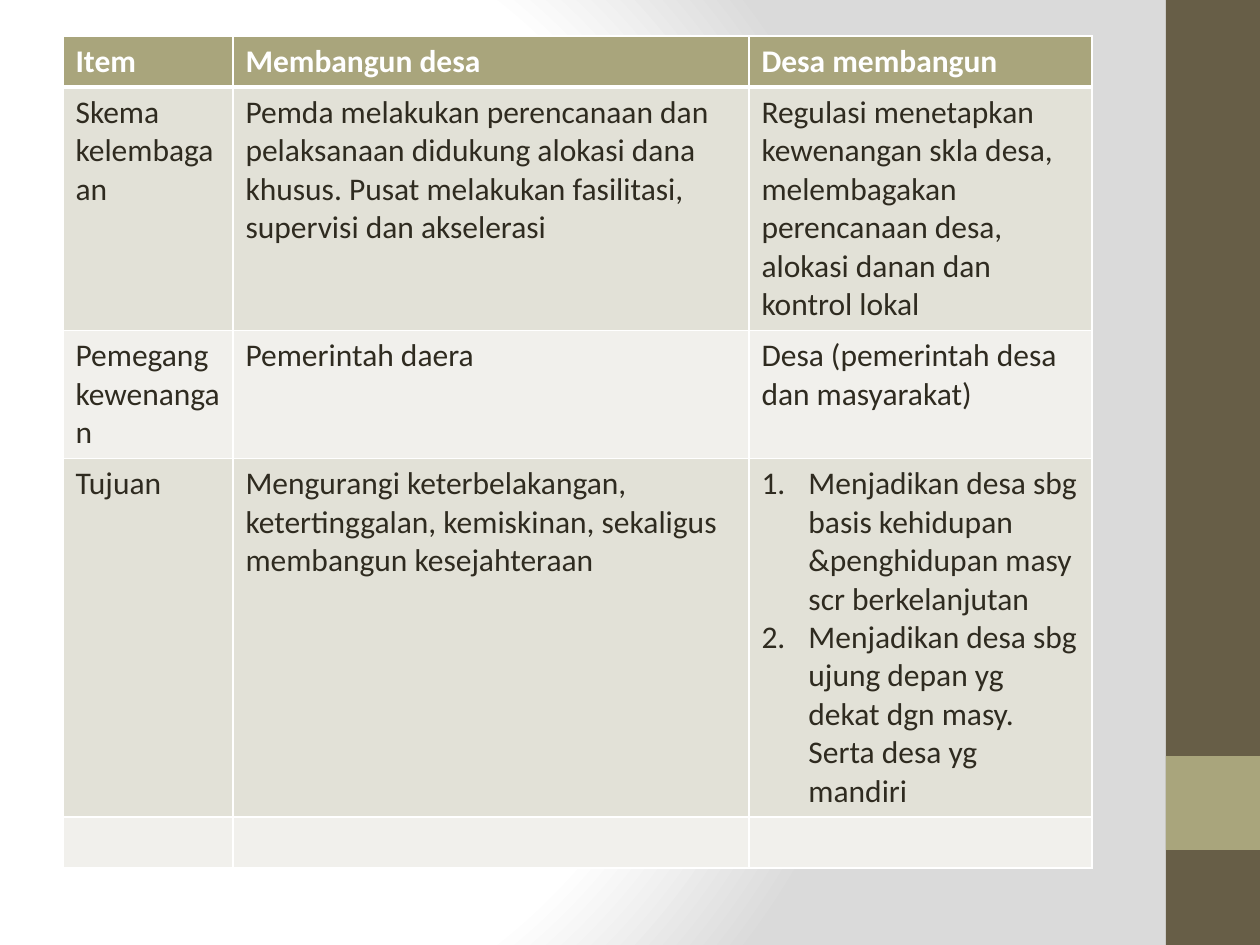
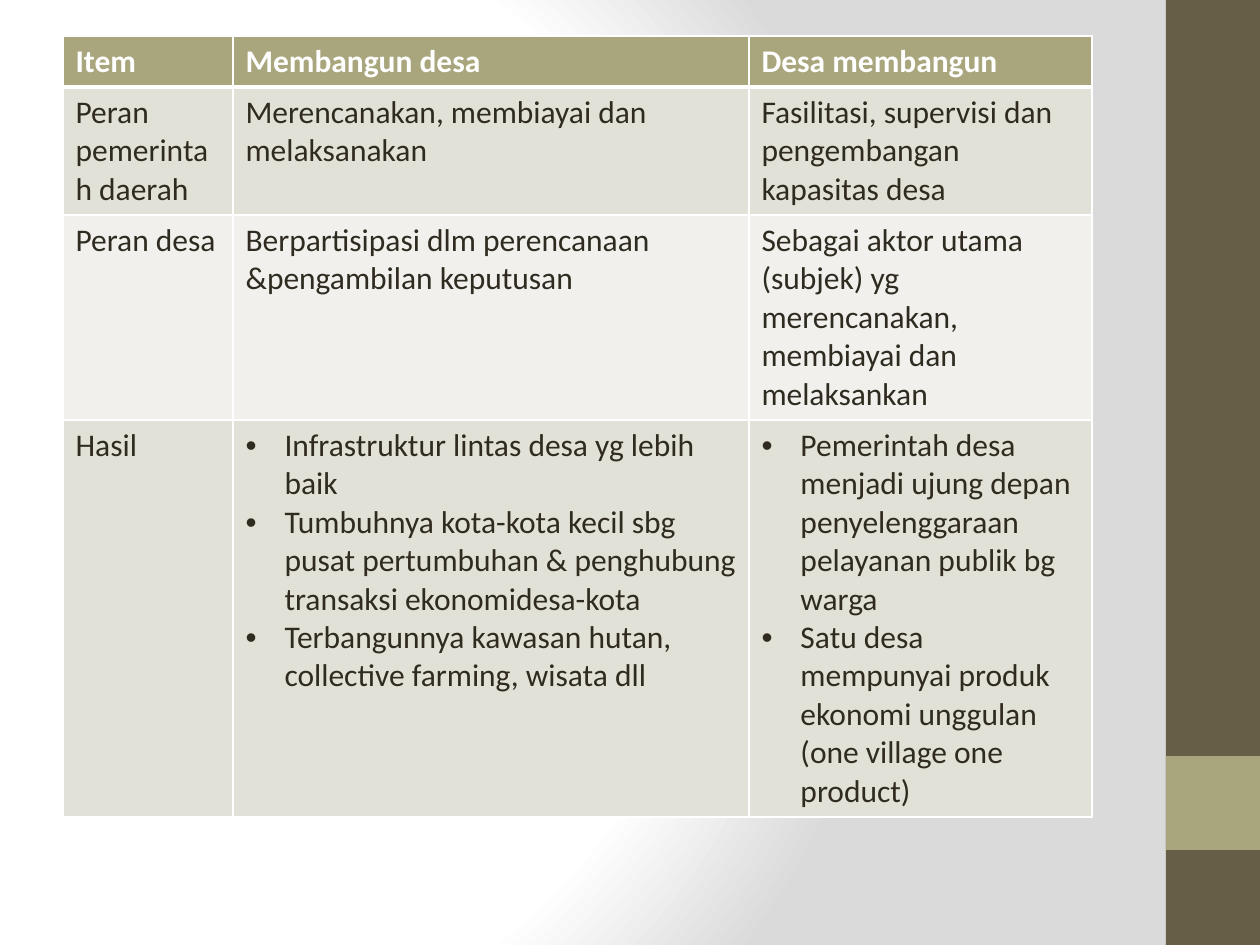
from dataclasses import dataclass

from lxml import etree
from pptx import Presentation
from pptx.dml.color import RGBColor
from pptx.enum.shapes import MSO_SHAPE
from pptx.oxml import parse_xml
from pptx.oxml.ns import nsdecls, qn
from pptx.util import Emu, Pt

RECTANGLE = MSO_SHAPE.RECTANGLE
PX_PER_INCH = 126
SLIDE_WIDTH, SLIDE_HEIGHT = 1260, 945
BLANK_LAYOUT = 6

FONT = "Calibri"
TEXT_SIZE = 18
WHITE = "FFFFFF"
GREY = "DADADA"
BROWN = "675E47"
OLIVE = "A9A57C"
INK = "2F2B20"
ROW_FILLS = ("E2E1D7", "F1F0EC")

TABLE_LEFT, TABLE_TOP = 63, 36
COLUMN_WIDTHS = (170, 516, 343)
ROW_HEIGHT = 51
THIN_BORDER, HEADER_BORDER = 1, 3
HEADER = ("Item", "Membangun desa", "Desa membangun")


@dataclass(frozen=True)
class Band:
    left: int
    top: int
    width: int
    height: int
    color: str


@dataclass(frozen=True)
class ListStyle:
    indent: int
    markers: tuple[tuple[str, dict[str, str]], ...]


@dataclass(frozen=True)
class CellText:
    paragraphs: tuple[str, ...]
    list_style: ListStyle | None = None


@dataclass(frozen=True)
class CellLook:
    fill: str
    color: str
    bold: bool
    top: int
    bottom: int


BANDS = (
    Band(1166, 0, 94, 945, BROWN),
    Band(1166, 756, 94, 94, OLIVE),
)
NUMBERED = ListStyle(47, (("a:buAutoNum", {"type": "arabicPeriod"}),))
BULLETED = ListStyle(39, (("a:buFont", {"typeface": "Arial"}), ("a:buChar", {"char": "•"})))

Row = tuple[str | CellText, ...]

INSTITUTION_ROWS: tuple[Row, ...] = (
    (
        "Skema kelembagaan",
        "Pemda melakukan perencanaan dan pelaksanaan didukung alokasi dana khusus. "
        "Pusat melakukan fasilitasi, supervisi dan akselerasi",
        "Regulasi menetapkan kewenangan skla desa, melembagakan perencanaan desa, "
        "alokasi danan dan kontrol lokal",
    ),
    ("Pemegang kewenangan", "Pemerintah daera", "Desa (pemerintah desa dan masyarakat)"),
    (
        "Tujuan",
        "Mengurangi keterbelakangan, ketertinggalan, kemiskinan, sekaligus "
        "membangun kesejahteraan",
        CellText((
            "Menjadikan desa sbg basis kehidupan &penghidupan masy scr berkelanjutan",
            "Menjadikan desa sbg ujung depan yg dekat dgn masy. Serta desa yg mandiri",
        ), NUMBERED),
    ),
    ("", "", ""),
)

ROLE_ROWS: tuple[Row, ...] = (
    (
        "Peran pemerintah daerah",
        "Merencanakan, membiayai dan melaksanakan",
        "Fasilitasi, supervisi dan pengembangan kapasitas desa",
    ),
    (
        "Peran desa",
        "Berpartisipasi dlm perencanaan &pengambilan keputusan",
        "Sebagai aktor utama (subjek) yg merencanakan, membiayai dan melaksankan",
    ),
    (
        "Hasil",
        CellText((
            "Infrastruktur lintas desa yg lebih baik",
            "Tumbuhnya kota-kota kecil sbg pusat pertumbuhan & penghubung transaksi "
            "ekonomidesa-kota",
            "Terbangunnya kawasan hutan, collective farming, wisata dll",
        ), BULLETED),
        CellText((
            "Pemerintah desa menjadi ujung depan penyelenggaraan pelayanan publik bg warga",
            "Satu desa mempunyai produk ekonomi unggulan (one village one product)",
        ), BULLETED),
    ),
)


def px(length: int) -> Emu:
    return Emu(round(length * 914400 / PX_PER_INCH))


def rgb(color: str) -> RGBColor:
    return RGBColor.from_string(color)


def set_background(master) -> None:
    master.background.fill.solid()
    properties = master.element.find(f".//{qn('p:bgPr')}")
    stops = "".join(
        f'<a:gs pos="{position * 1000}"><a:srgbClr val="{color}"/></a:gs>'
        for position, color in ((0, WHITE), (75, WHITE), (100, GREY))
    )
    properties[0] = parse_xml(
        f'<a:gradFill {nsdecls("a")} rotWithShape="1"><a:gsLst>{stops}</a:gsLst>'
        '<a:path path="circle"><a:fillToRect l="20000" t="50000" r="100000" b="50000"/>'
        "</a:path></a:gradFill>"
    )


def add_band(slide, band: Band) -> None:
    shape = slide.shapes.add_shape(
        RECTANGLE, px(band.left), px(band.top), px(band.width), px(band.height)
    )
    shape.shadow.inherit = False
    shape.fill.solid()
    shape.fill.fore_color.rgb = rgb(band.color)
    shape.line.fill.background()


def set_borders(cell, look: CellLook) -> None:
    properties = cell._tc.get_or_add_tcPr()
    widths = {"L": THIN_BORDER, "R": THIN_BORDER, "T": look.top, "B": look.bottom}
    for position, (side, width) in enumerate(widths.items()):
        properties.insert(position, parse_xml(
            f'<a:ln{side} {nsdecls("a")} w="{Pt(width)}"><a:solidFill>'
            f'<a:srgbClr val="{WHITE}"/></a:solidFill></a:ln{side}>'
        ))


def apply_list_style(paragraph, style: ListStyle) -> None:
    properties = paragraph._p.get_or_add_pPr()
    properties.set("marL", str(px(style.indent)))
    properties.set("indent", str(-px(style.indent)))
    for tag, attributes in style.markers:
        etree.SubElement(properties, qn(tag), attributes)


def fill_cell(cell, content: str | CellText, look: CellLook) -> None:
    cell.fill.solid()
    cell.fill.fore_color.rgb = rgb(look.fill)
    set_borders(cell, look)
    text = CellText((content,)) if isinstance(content, str) else content
    frame = cell.text_frame
    for index, words in enumerate(text.paragraphs):
        paragraph = frame.add_paragraph() if index else frame.paragraphs[0]
        if text.list_style:
            apply_list_style(paragraph, text.list_style)
        if words:
            run = paragraph.add_run()
            run.text = words
            run.font.name = FONT
            run.font.size = Pt(TEXT_SIZE)
            run.font.bold = look.bold
            run.font.color.rgb = rgb(look.color)


def row_look(index: int) -> CellLook:
    if index == 0:
        return CellLook(OLIVE, WHITE, True, THIN_BORDER, HEADER_BORDER)
    top = HEADER_BORDER if index == 1 else THIN_BORDER
    return CellLook(ROW_FILLS[(index - 1) % 2], INK, False, top, THIN_BORDER)


def add_comparison_table(slide, body: tuple[Row, ...]) -> None:
    rows = (HEADER, *body)
    table = slide.shapes.add_table(
        len(rows), len(HEADER), px(TABLE_LEFT), px(TABLE_TOP),
        px(sum(COLUMN_WIDTHS)), px(ROW_HEIGHT * len(rows)),
    ).table
    table.horz_banding = False
    for column, width in zip(table.columns, COLUMN_WIDTHS):
        column.width = px(width)
    for index, contents in enumerate(rows):
        table.rows[index].height = px(ROW_HEIGHT)
        for cell, content in zip(table.rows[index].cells, contents):
            fill_cell(cell, content, row_look(index))


def main() -> None:
    presentation = Presentation()
    presentation.slide_width = px(SLIDE_WIDTH)
    presentation.slide_height = px(SLIDE_HEIGHT)
    set_background(presentation.slide_master)
    for body in (INSTITUTION_ROWS, ROLE_ROWS):
        slide = presentation.slides.add_slide(presentation.slide_layouts[BLANK_LAYOUT])
        for band in BANDS:
            add_band(slide, band)
        add_comparison_table(slide, body)
    presentation.save("out.pptx")


if __name__ == "__main__":
    main()
